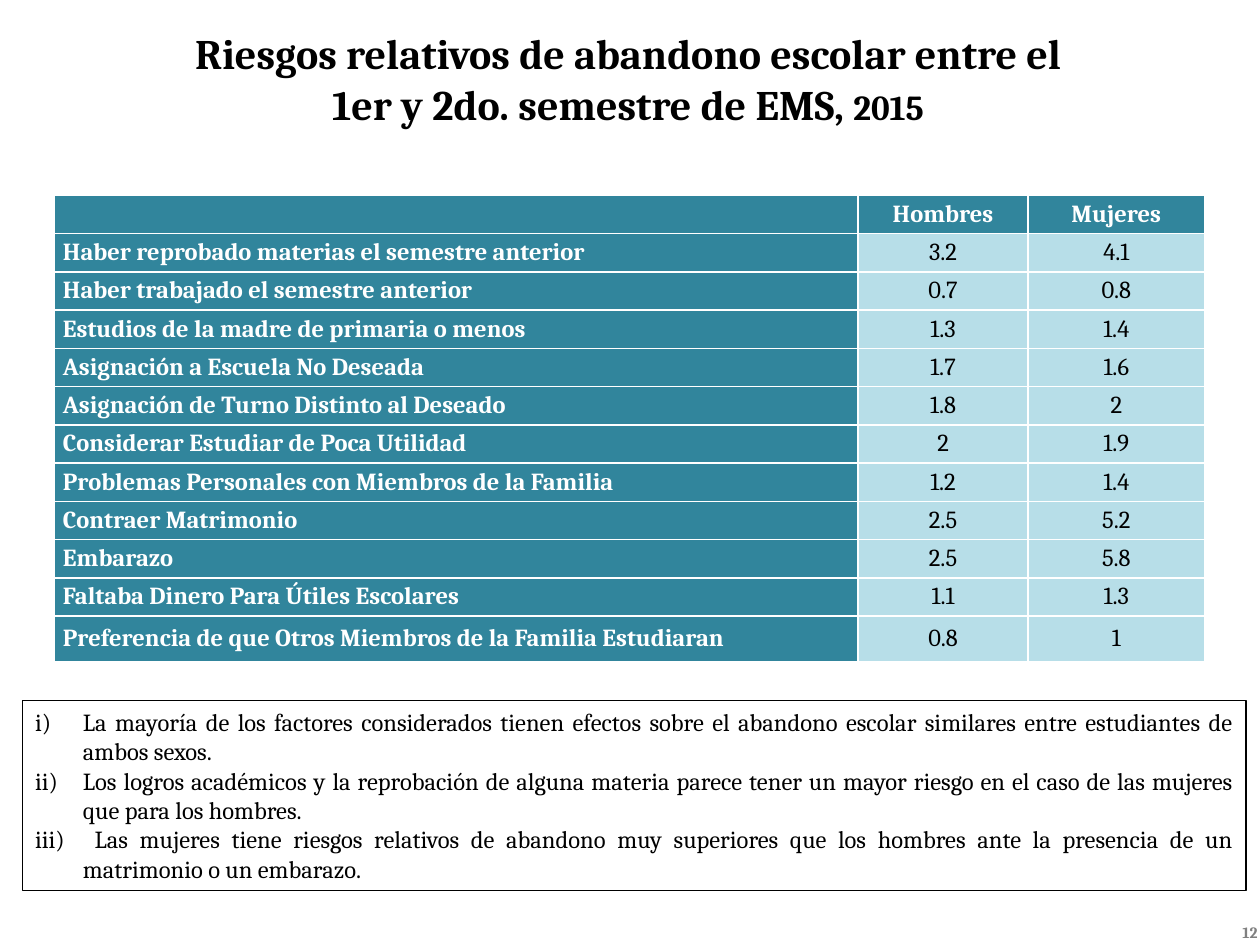
"""Build the slide on relative risks of leaving school, with table and findings."""
from lxml import etree
from pptx import Presentation
from pptx.dml.color import RGBColor
from pptx.enum.shapes import MSO_SHAPE
from pptx.enum.text import MSO_ANCHOR as ANCHOR, PP_ALIGN as ALIGN
from pptx.oxml.ns import qn
from pptx.util import Inches, Pt


def rgb(value):
    return RGBColor.from_string(value)


def style(p, size, color, bold, align):
    p.alignment = align
    p.font.name = "Cambria"
    p.font.size = Pt(size)
    p.font.bold = bold
    p.font.color.rgb = rgb(color)


prs = Presentation()
prs.slide_width, prs.slide_height = Inches(10), Inches(7.5)
s = prs.slides.add_slide(prs.slide_layouts[6])

rows = [
    ("", "Hombres", "Mujeres"),
    ("Haber reprobado materias el semestre anterior", "3.2", "4.1"),
    ("Haber trabajado el semestre anterior", "0.7", "0.8"),
    ("Estudios de la madre de primaria o menos", "1.3", "1.4"),
    ("Asignación a Escuela No Deseada", "1.7", "1.6"),
    ("Asignación de Turno Distinto al Deseado", "1.8", "2"),
    ("Considerar Estudiar de Poca Utilidad", "2", "1.9"),
    ("Problemas Personales con Miembros de la Familia", "1.2", "1.4"),
    ("Contraer Matrimonio", "2.5", "5.2"),
    ("Embarazo", "2.5", "5.8"),
    ("Faltaba Dinero Para Útiles Escolares", "1.1", "1.3"),
    ("Preferencia de que Otros Miembros de la Familia Estudiaran", "0.8", "1"),
]
last_height = 0.36
row_height = (3.7 - last_height) / (len(rows) - 1)
table = s.shapes.add_table(len(rows), 3, Inches(0.43), Inches(1.55),
                           Inches(9.13), Inches(3.7)).table
table.first_col = True
for col, width in zip(table.columns, (6.38, 1.35, 1.4)):
    col.width = Inches(width)
for i, row in enumerate(rows):
    table.rows[i].height = Inches(last_height if i == len(rows) - 1 else row_height)
    for j, text in enumerate(row):
        heading = i == 0 or j == 0
        cell = table.cell(i, j)
        cell.text = text
        cell.vertical_anchor = ANCHOR.MIDDLE
        cell.margin_left = cell.margin_right = Inches(0.07)
        cell.margin_top = cell.margin_bottom = 0
        cell.fill.solid()
        cell.fill.fore_color.rgb = rgb("31859C" if heading else "B7DEE8")
        style(cell.text_frame.paragraphs[0], 14, "FFFFFF" if heading else "000000",
              heading, ALIGN.CENTER if j else ALIGN.LEFT)

findings = [
    "La mayoría de los factores considerados tienen efectos sobre el abandono escolar "
    "similares entre estudiantes de ambos sexos.",
    "Los logros académicos y la reprobación de alguna materia parece tener un mayor "
    "riesgo en el caso de las mujeres que para los hombres.",
    " Las mujeres tiene riesgos relativos de abandono muy superiores que los hombres "
    "ante la presencia de un matrimonio o un embarazo.",
]
box = s.shapes.add_shape(MSO_SHAPE.RECTANGLE, Inches(0.18), Inches(5.56),
                         Inches(9.71), Inches(1.51))
box.shadow.inherit = False
box.fill.background()
box.line.color.rgb = rgb("000000")
box.line.width = Pt(0.75)
tf = box.text_frame
tf.word_wrap = True
tf.vertical_anchor = ANCHOR.TOP
tf.text = "\n".join(findings)
for p in tf.paragraphs:
    style(p, 14, "000000", False, ALIGN.JUSTIFY)
    pPr = p._p.get_or_add_pPr()
    pPr.set("marL", str(Inches(0.38)))
    pPr.set("indent", str(-Inches(0.38)))
    bullet = etree.Element(qn("a:buAutoNum"), type="romanLcParenR")
    pPr.insert(0, bullet)

title = s.shapes.add_textbox(Inches(0.13), Inches(0.17), Inches(9.71), Inches(0.91))
tf = title.text_frame
tf.word_wrap = True
tf.text = "Riesgos relativos de abandono escolar entre el\n1er y 2do. semestre de EMS, "
for p in tf.paragraphs:
    style(p, 24, "000000", True, ALIGN.CENTER)
r = tf.paragraphs[-1].add_run()
r.text = "2015"
r.font.size = Pt(20)

number = s.shapes.add_textbox(Inches(7.75), Inches(7.29), Inches(2.33), Inches(0.22))
tf = number.text_frame
tf.word_wrap = True
tf.vertical_anchor = ANCHOR.MIDDLE
tf.text = "12"
style(tf.paragraphs[0], 9, "808080", True, ALIGN.RIGHT)

prs.save("out.pptx")
